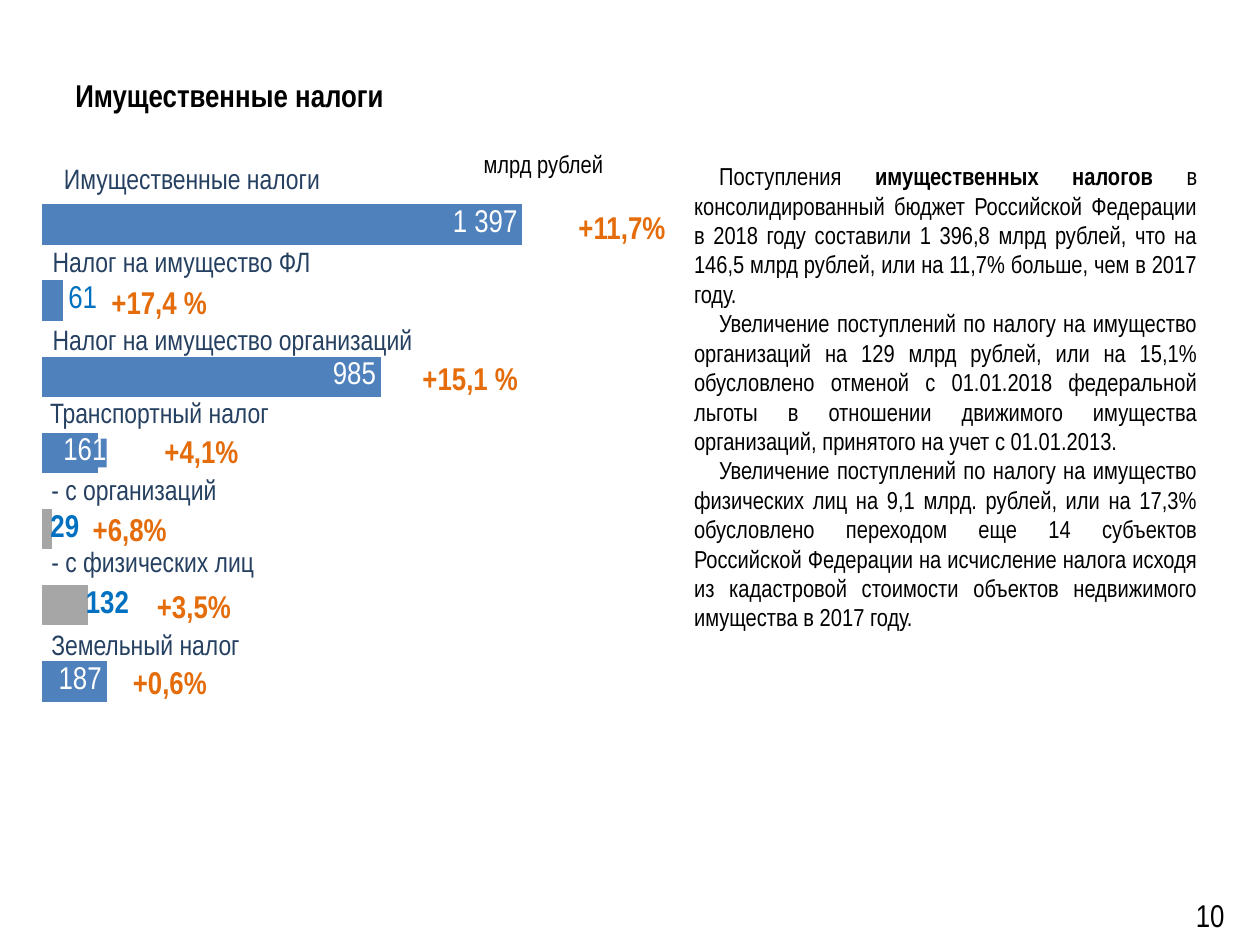
from lxml import etree
from pptx import Presentation
from pptx import util as u
from pptx.chart.data import CategoryChartData
from pptx.dml.color import RGBColor
from pptx.enum import chart as charts, text
from pptx.oxml import parse_xml
from pptx.oxml.ns import nsdecls, qn

BLACK, WHITE, NAVY, ORANGE = "000000", "FFFFFF", "254061", "E46C0A"
BAR, GREY, BLUE = "4F81BD", "A6A6A6", "0070C0"
LEFT, CENTER, JUSTIFY, RIGHT = (
    text.PP_ALIGN.LEFT, text.PP_ALIGN.CENTER, text.PP_ALIGN.JUSTIFY, text.PP_ALIGN.RIGHT)
TOP, MIDDLE = text.MSO_ANCHOR.TOP, text.MSO_ANCHOR.MIDDLE
INSIDE, OUTSIDE = charts.XL_LABEL_POSITION.INSIDE_END, charts.XL_LABEL_POSITION.OUTSIDE_END


def color(value):
    return RGBColor.from_string(value)


def manual_layout(**settings):
    layout = etree.Element(qn("c:layout"))
    manual = etree.SubElement(layout, qn("c:manualLayout"))
    for name, value in settings.items():
        etree.SubElement(manual, qn(f"c:{name}")).set("val", str(value))
    return layout


class SlideBuilder:
    font_name = "Arial Narrow"

    def __init__(self, slide):
        self.slide = slide

    def style(self, font, size, fill, bold=False):
        font.name, font.size, font.bold = self.font_name, u.Pt(size), bold
        font.color.rgb = color(fill)

    def box(self, left, top, width, height, anchor=TOP, wrap=True):
        shape = self.slide.shapes.add_textbox(*map(u.Pt, (left, top, width, height)))
        shape.text_frame.word_wrap = wrap
        shape.text_frame.vertical_anchor = anchor
        return shape.text_frame

    def line(self, content, left, top, width, height, size, fill,
             bold=False, align=LEFT, anchor=TOP, wrap=True):
        frame = self.box(left, top, width, height, anchor, wrap)
        paragraph = frame.paragraphs[0]
        paragraph.text, paragraph.alignment = content, align
        self.style(paragraph.font, size, fill, bold)
        return frame

    def article(self, paragraphs, left, top, width, height):
        frame = self.box(left, top, width, height)
        for index, runs in enumerate(paragraphs):
            paragraph = frame.add_paragraph() if index else frame.paragraphs[0]
            paragraph.alignment = JUSTIFY
            paragraph._p.get_or_add_pPr().set("indent", str(u.Pt(14.4)))
            self.style(paragraph.font, 14, BLACK)
            for content, bold in runs:
                run = paragraph.add_run()
                run.text = content
                self.style(run.font, 14, BLACK, bold)

    def bars(self, values, left, top, width, height):
        data = CategoryChartData(number_format="#,##0")
        data.categories = [str(number + 1) for number in range(len(values))]
        data.add_series("Series 1", values)
        frame = self.slide.shapes.add_chart(
            charts.XL_CHART_TYPE.BAR_CLUSTERED, *map(u.Pt, (left, top, width, height)), data)
        chart = frame.chart
        chart.has_legend = chart.has_title = False
        chart.font.name, chart.font.size = "Calibri", u.Pt(18)
        chart.font.color.rgb = color(BLACK)
        for axis in (chart.category_axis, chart.value_axis):
            axis.visible = axis.has_major_gridlines = False
        chart.value_axis.minimum_scale, chart.value_axis.maximum_scale = 0, 1600
        plot = chart.plots[0]
        plot.gap_width, plot.vary_by_categories = 88, False
        area = chart._chartSpace.find(".//" + qn("c:plotArea"))
        for old in area.findall(qn("c:layout")):
            area.remove(old)
        area.insert(0, manual_layout(layoutTarget="inner", xMode="edge", yMode="edge",
                                     x=0.025, y=0, w=0.798, h=1))
        series = plot.series[0]
        series.format.fill.solid()
        series.format.fill.fore_color.rgb = color(BAR)
        labels = series.data_labels
        labels.show_value, labels.position = True, INSIDE
        labels.number_format, labels.number_format_is_linked = "[>=1000]# ##0;0", False
        self.style(labels.font, 18, WHITE)
        return series

    def point_label(self, series, index, position, fill, bold=False, shift=0, back=None):
        label = series.points[index].data_label
        self.style(label.font, 18, fill, bold)
        label.position = position
        element = series._element.xpath(f'.//c:dLbl[c:idx/@val="{index}"]')[0]
        if shift:
            element.insert(1, manual_layout(x=shift, y=0))
        if back:
            element.find(qn("c:txPr")).addprevious(parse_xml(
                f'<c:spPr {nsdecls("c", "a")}><a:solidFill>'
                f'<a:srgbClr val="{back}"/></a:solidFill></c:spPr>'))


TAXES = [
    ("Имущественные налоги", 29.5, 88.6, 219),
    ("Налог на имущество ФЛ", 23, 136.1, 199),
    ("Налог на имущество организаций", 23, 180.7, 272),
    ("Транспортный налог", 21.6, 222.5, 199),
    ("- с организаций", 22.3, 266.4, 199),
    ("- с физических лиц", 22.3, 307.4, 199),
    ("Земельный налог", 22.3, 355, 199),
]
GROWTH = [
    ("+11,7%", 311.8, 115.2, 87.1, CENTER),
    ("+17,4 %", 45.4, 158.4, 79.9, RIGHT),
    ("+15,1 %", 206.6, 201.6, 96.5, RIGHT),
    ("+4,1%", 74.2, 243.4, 69.1, RIGHT),
    ("+6,8%", 45.4, 288, 56.9, RIGHT),
    ("+3,5%", 53.3, 331.9, 85.7, RIGHT),
    ("+0,6%", 67.7, 375.1, 57.6, RIGHT),
]
ARTICLE = [
    [("Поступления ", False), ("имущественных налогов ", True),
     ("в консолидированный бюджет Российской Федерации в 2018 году составили 1 396,8 млрд "
      "рублей, что на 146,5 млрд рублей, или на 11,7% больше, чем в 2017 году.", False)],
    [("Увеличение поступлений по налогу на имущество организаций на 129 млрд рублей, или на "
      "15,1% обусловлено отменой с 01.01.2018 федеральной льготы в отношении движимого "
      "имущества организаций, принятого на учет с 01.01.2013.", False)],
    [("Увеличение поступлений по налогу на имущество физических лиц на 9,1 млрд. рублей, или "
      "на 17,3% обусловлено переходом еще 14 субъектов Российской Федерации на исчисление "
      "налога исходя из кадастровой стоимости объектов недвижимого имущества в 2017 году.",
      False)],
]


def main():
    presentation = Presentation()
    presentation.slide_width, presentation.slide_height = u.Pt(720), u.Pt(540)
    builder = SlideBuilder(presentation.slides.add_slide(presentation.slide_layouts[6]))

    builder.line("Имущественные налоги", 36, 9.4, 648, 90, 18, BLACK, True, anchor=MIDDLE)
    builder.article(ARTICLE, 389.5, 88.6, 301.7, 296)

    series = builder.bars((187, 132, 29, 161, 985, 61, 1397), 14.4, 106.6, 393.8, 304.6)
    for index in (1, 2):
        fill = series.points[index].format.fill
        fill.solid()
        fill.fore_color.rgb = color(GREY)
    builder.point_label(series, 1, OUTSIDE, BLUE, True, shift=-0.01)
    builder.point_label(series, 2, OUTSIDE, BLUE, True, shift=-0.01)
    builder.point_label(series, 3, INSIDE, WHITE, shift=0.02, back=BAR)
    builder.point_label(series, 5, OUTSIDE, BLUE)

    builder.line("млрд рублей", 269.3, 81.4, 101.5, 41, 14, BLACK)
    for name, left, top, width in TAXES:
        builder.line(name, left, top, width, 26.6, 16, NAVY, anchor=MIDDLE)
    for change, left, top, width, align in GROWTH:
        builder.line(change, left, top, width, 28.8, 18, ORANGE, True, align, wrap=width > 60)

    number = builder.line("10", 663.1, 491, 56.9, 54.7, 18, BLACK, align=CENTER, anchor=MIDDLE)
    number.margin_left = number.margin_right = u.Pt(7.9)
    number.margin_top = number.margin_bottom = u.Pt(4.3)
    number.paragraphs[0].line_spacing = u.Pt(30.1)
    presentation.save("out.pptx")


if __name__ == "__main__":
    main()
